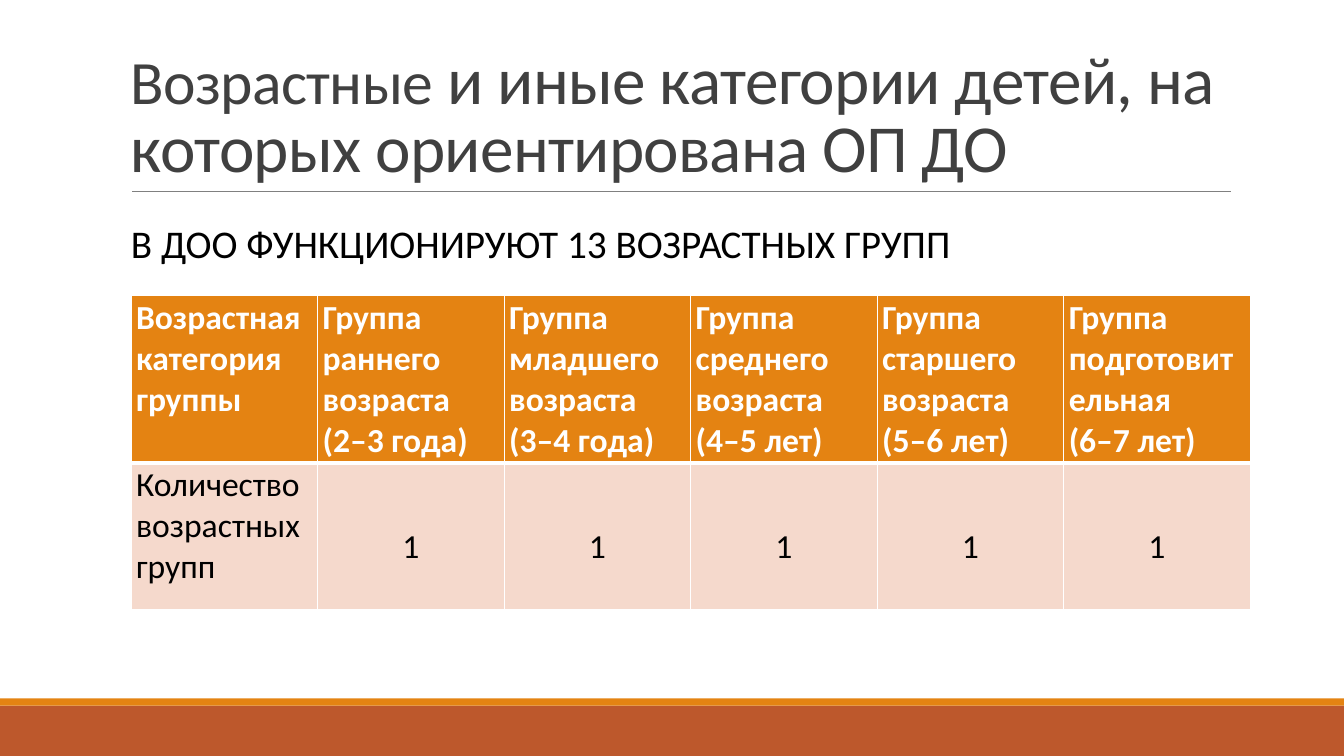
from dataclasses import dataclass

from lxml import etree
from pptx import Presentation
from pptx import util as u
from pptx.dml.color import RGBColor
from pptx.enum import shapes, text
from pptx.oxml import ns

PX = 9144  # EMU in one px, 100 px to the inch


@dataclass(frozen=True)
class Theme:
    font: str = "Calibri"
    rust: str = "BD582C"
    orange: str = "E48312"
    blush: str = "F5D9CC"
    rule: str = "808080"
    heading: str = "404040"
    ink: str = "000000"
    white: str = "FFFFFF"
    title_size: int = 48
    title_lead_size: int = 44
    subtitle_size: int = 28
    table_size: int = 24


def px(length):
    return u.Emu(length * PX)


def write(para, words, *, font, size, color, bold=False, tracking=0,
          line=None, before=0, after=0, align=None):
    """Add a span to para; tracking is in hundredths of a point."""
    span = para.add_run()
    span.text = words
    span.font.name = font
    span.font.size = u.Pt(size)
    span.font.bold = bold
    span.font.color.rgb = RGBColor.from_string(color)
    if tracking:
        span.font._element.set("spc", str(tracking))
    para.line_spacing = line
    para.space_before, para.space_after = u.Pt(before), u.Pt(after)
    para.alignment = align


def set_border(cell, side, color, points):
    """Draw one border of a cell; call before the cell gets its fill."""
    properties = cell._tc.get_or_add_tcPr()
    border = etree.SubElement(properties, ns.qn(f"a:ln{side}"), w=str(u.Pt(points)))
    fill = etree.SubElement(border, ns.qn("a:solidFill"))
    etree.SubElement(fill, ns.qn("a:srgbClr"), val=color)


class SlideBuilder:
    def __init__(self, page, theme):
        self.page = page
        self.theme = theme

    def band(self, left, top, width, height, color):
        shape = self.page.shapes.add_shape(
            shapes.MSO_SHAPE.RECTANGLE, *map(px, (left, top, width, height)))
        shape.shadow.inherit = False
        shape.fill.solid()
        shape.fill.fore_color.rgb = RGBColor.from_string(color)
        shape.line.fill.background()

    def rule(self, left, right, top):
        line = self.page.shapes.add_connector(
            shapes.MSO_CONNECTOR.STRAIGHT, *map(px, (left, top, right, top)))
        line.line.color.rgb = RGBColor.from_string(self.theme.rule)
        line.line.width = u.Pt(0.5)
        etree.SubElement(line._element.spPr, ns.qn("a:effectLst"))

    def textbox(self, left, top, width, height, spans, anchor, **layout):
        """Place one paragraph made of (words, format) spans."""
        box = self.page.shapes.add_textbox(*map(px, (left, top, width, height)))
        frame = box.text_frame
        frame.word_wrap = True
        frame.vertical_anchor = anchor
        for words, style in spans:
            write(frame.paragraphs[0], words, font=self.theme.font, **style, **layout)

    def table(self, left, top, column_width, row_heights, rows):
        """Each row is (cells, fill, bottom border, formats); a cell lists its paragraphs."""
        columns = len(rows[0][0])
        grid = self.page.shapes.add_table(
            len(rows), columns, px(left), px(top),
            px(column_width * columns), px(sum(row_heights))).table
        for column in grid.columns:
            column.width = px(column_width)
        for row, height, (cells, fill, bottom, formats) in zip(grid.rows, row_heights, rows):
            row.height = px(height)
            for cell, lines, style in zip(row.cells, cells, formats):
                self.fill_cell(cell, lines, fill, bottom, style)

    def fill_cell(self, cell, lines, fill, bottom, style):
        cell.margin_left = cell.margin_right = px(5)
        cell.margin_top = cell.margin_bottom = px(2)
        for side, points in (("L", 1), ("R", 1), ("T", 1), ("B", bottom)):
            set_border(cell, side, self.theme.white, points)
        cell.fill.solid()
        cell.fill.fore_color.rgb = RGBColor.from_string(fill)
        frame = cell.text_frame
        for index, words in enumerate(lines):
            para = frame.add_paragraph() if index else frame.paragraphs[0]
            write(para, words, font=self.theme.font, size=self.theme.table_size, **style)


def main():
    theme = Theme()
    deck = Presentation()
    deck.slide_width, deck.slide_height = px(1333), px(750)
    slide = SlideBuilder(deck.slides.add_slide(deck.slide_layouts[6]), theme)

    slide.band(0, 700, 1333, 50, theme.rust)
    slide.band(0, 693, 1333, 7, theme.orange)
    slide.rule(131, 1221, 190)

    title = dict(color=theme.heading, tracking=-50)
    slide.textbox(120, 31, 1100, 159, [
        ("Возрастные", dict(title, size=theme.title_lead_size)),
        (" и иные категории детей, на которых ориентирована ОП ДО",
         dict(title, size=theme.title_size)),
    ], text.MSO_ANCHOR.BOTTOM, line=0.85)
    slide.textbox(120, 215, 915, 58, [
        ("В ДОО ФУНКЦИОНИРУЮТ 13 ВОЗРАСТНЫХ ГРУПП",
         dict(size=theme.subtitle_size, color=theme.ink)),
    ], text.MSO_ANCHOR.MIDDLE, line=0.9, before=12, after=2)

    headers = [
        ["Возрастная категория группы"],
        ["Группа раннего возраста", "(2–3 года)"],
        ["Группа младшего возраста", "(3–4 года)"],
        ["Группа среднего возраста (4–5 лет)"],
        ["Группа старшего возраста (5–6 лет)"],
        ["Группа подготовительная", "(6–7 лет)"],
    ]
    groups = len(headers) - 1
    counts = [["Количество возрастных групп"]] + [["1"]] * groups
    header = dict(color=theme.white, bold=True)
    label = dict(color=theme.ink)
    count = dict(label, line=2.5, align=text.PP_ALIGN.CENTER)
    slide.table(130, 293, 185, [166, 146], [
        (headers, theme.orange, 3, [header] * len(headers)),
        (counts, theme.blush, 1, [label] + [count] * groups),
    ])
    deck.save("out.pptx")


if __name__ == "__main__":
    main()
